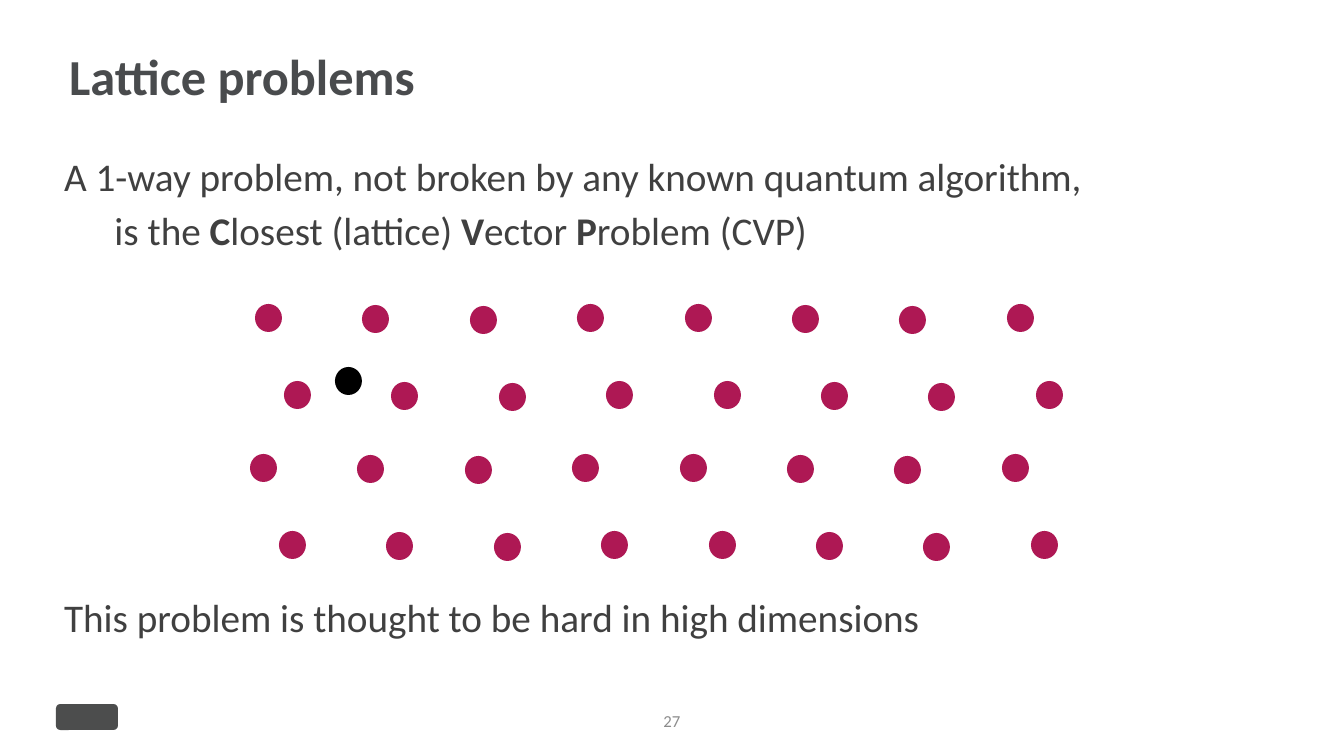
import pptx
import pptx.dml.color
import pptx.enum.shapes
import pptx.enum.text
import pptx.oxml
import pptx.oxml.ns
import pptx.util
from dataclasses import dataclass

TITLE = "Lattice problems"
BODY = [
    (0, [("A 1-way problem, not broken by any known quantum algorithm,", False)]),
    (5, [("\tis the ", False), ("C", True), ("losest (lattice) ", False),
         ("V", True), ("ector ", False), ("P", True), ("roblem (CVP)", False)]),
    (243, [("This problem is thought to be hard in high dimensions", False)]),
]
NUMBER = "27"
ROWS = [(255, 304), (284, 381), (250, 454), (279, 531)]
DRIFT = [0, 1, 2, 0, 0, 1, 2, 0]
PITCH = 107.4
DOT = (27, 28)
TARGET = (335, 367)
TAB = 52


@dataclass(frozen=True)
class Theme:
    font: str = "Calibri"
    title: str = "494B4D"
    body: str = "404040"
    number: str = "8C8C8C"
    dot: str = "AE1854"
    target: str = "000000"
    mark: str = "4C4D4D"
    big: int = 36
    mid: int = 28
    small: int = 12


theme = Theme()
SHAPE = pptx.enum.shapes.MSO_SHAPE
ALIGN = pptx.enum.text.PP_ALIGN
ANCHOR = pptx.enum.text.MSO_ANCHOR


def px(length):
    return pptx.util.Emu(round(length * 914400 / 100.8))


def place(shape, left, top, width, height):
    shape.left, shape.top = px(left), px(top)
    shape.width, shape.height = px(width), px(height)


def write(para, text, size, color, bold=False):
    run = para.add_run()
    run.text = text
    font = run.font
    font.name, font.size, font.bold = theme.font, pptx.util.Pt(size), bold
    font.color.rgb = pptx.dml.color.RGBColor.from_string(color)


def frame(shape, anchor):
    box = shape.text_frame
    box.word_wrap = True
    box.auto_size = pptx.enum.text.MSO_AUTO_SIZE.NONE
    box.vertical_anchor = anchor
    return box


def draw(slide, kind, spot, size, color):
    shape = slide.shapes.add_shape(kind, *map(px, spot + size))
    shape.shadow.inherit = False
    shape.fill.solid()
    shape.fill.fore_color.rgb = pptx.dml.color.RGBColor.from_string(color)
    shape.line.fill.background()


def add_title(slide):
    shape = slide.shapes.title
    place(shape, 59, 40, 1226, 79)
    para = frame(shape, ANCHOR.MIDDLE).paragraphs[0]
    para.alignment = ALIGN.LEFT
    para.line_spacing = 0.9
    write(para, TITLE, theme.big, theme.title, True)


def add_body(slide):
    shape = slide.placeholders[1]
    place(shape, 54, 147, 1230, 532)
    box = frame(shape, ANCHOR.TOP)
    for index, (space, runs) in enumerate(BODY):
        para = box.add_paragraph() if index else box.paragraphs[0]
        props = para._p.get_or_add_pPr()
        props.set("marL", "0")
        props.set("indent", "0")
        space_name = pptx.oxml.ns.nsdecls("a")
        for xml in (f"<a:buNone {space_name}/>",
                    f'<a:tabLst {space_name}><a:tab pos="{px(TAB)}" algn="l"/></a:tabLst>'):
            props.append(pptx.oxml.parse_xml(xml))
        para.space_before = pptx.util.Pt(space)
        for text, bold in runs:
            write(para, text, theme.mid, theme.body, bold)


def add_number(slide):
    shape = slide.shapes.add_textbox(*map(px, (640, 701, 64, 40)))
    para = frame(shape, ANCHOR.MIDDLE).paragraphs[0]
    para.alignment = ALIGN.CENTER
    write(para, NUMBER, theme.small, theme.number)


def add_dots(slide):
    for left, top in ROWS:
        for col, drift in enumerate(DRIFT):
            spot = (left + round(col * PITCH), top + drift)
            draw(slide, SHAPE.OVAL, spot, DOT, theme.dot)
    draw(slide, SHAPE.OVAL, TARGET, DOT, theme.target)


def main():
    deck = pptx.Presentation()
    deck.slide_width, deck.slide_height = px(1344), px(756)
    slide = deck.slides.add_slide(deck.slide_layouts[1])
    draw(slide, SHAPE.ROUNDED_RECTANGLE, (56, 704), (62, 26), theme.mark)
    add_title(slide)
    add_number(slide)
    add_body(slide)
    add_dots(slide)
    deck.save("out.pptx")


if __name__ == "__main__":
    main()
